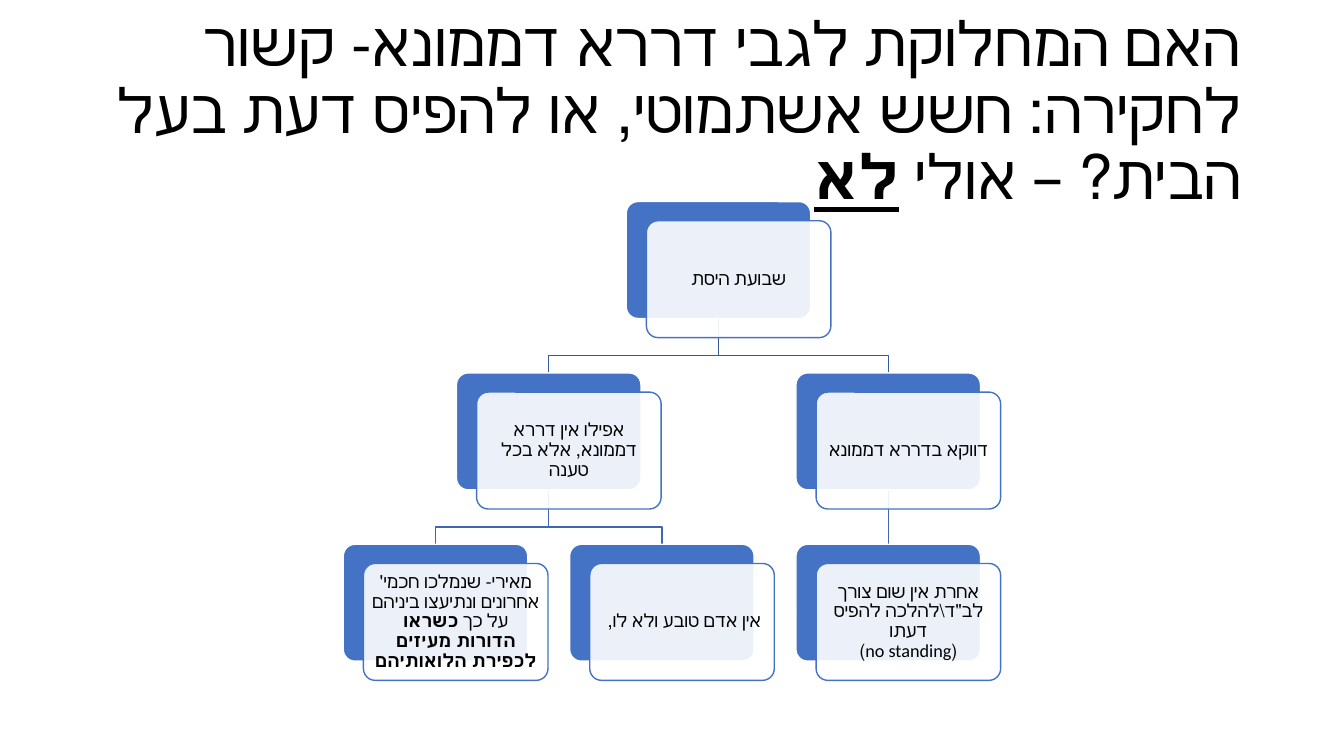
from dataclasses import dataclass

from lxml import etree
from pptx import Presentation
from pptx.dml.color import RGBColor
from pptx.enum import shapes, text
from pptx.oxml import ns
from pptx.util import Inches, Pt


@dataclass(frozen=True)
class Theme:
    font: str = "Calibri"
    title_size: int = 44
    card_size: int = 13
    ink: str = "000000"
    white: str = "FFFFFF"
    accent: str = "4472C4"
    upper_link: str = "365B9D"
    lower_link: str = "3E67B2"


THEME = Theme()

# Tree geometry in inches
FIRST_CENTER, LAST_CENTER, TREE_TOP = 4.32, 8.81, 2.0
COLUMN_STEP, ROW_STEP = (LAST_CENTER - FIRST_CENTER) / 2, 1.7
CARD_WIDTH, CARD_HEIGHT = 1.83, 1.16
FRONT_SHIFT_X, FRONT_SHIFT_Y = 0.2, 0.19
BEND_ABOVE_CHILD = 0.17
STRAIGHT_LINK_MARGIN = 0.05

# Each card: column, row, text runs as (text, bold)
CARDS = {
    "oath": (1.25, 0, [("שבועת היסת", False)]),
    "only": (2, 1, [("דווקא בדררא דממונא", False)]),
    "standing": (2, 2, [("אחרת אין שום צורך לב\"ד\\להלכה להפיס דעתו", False),
                        ("\n", False), ("(no standing)", False)]),
    "any claim": (0.5, 1, [("אפילו אין דררא דממונא, אלא בכל טענה", False)]),
    "claimant": (1, 2, [("אין אדם טובע ולא לו, ", False)]),
    "meiri": (0, 2, [("מאירי- שנמלכו חכמי' אחרונים ונתיעצו ביניהם על כך ", False),
                     ("כשראו הדורות מעיזים לכפירת הלואותיהם", True)]),
}
LINKS = [("any claim", "meiri"), ("any claim", "claimant"), ("oath", "any claim"),
         ("only", "standing"), ("oath", "only")]


def color(value):
    return RGBColor.from_string(value)


def card_top_center(name):
    column, row, _ = CARDS[name]
    return FIRST_CENTER + column * COLUMN_STEP, TREE_TOP + row * ROW_STEP


def write_hebrew(paragraph, runs, size, alignment):
    """Fill a right-to-left paragraph with (text, bold) runs."""
    for words, bold in runs:
        if words == "\n":
            paragraph.add_line_break()
            continue
        run = paragraph.add_run()
        run.text = words
        if bold:
            run.font.bold = True
    paragraph.alignment = alignment
    paragraph.line_spacing = 0.9
    paragraph._p.get_or_add_pPr().set("rtl", "1")
    font = paragraph.font
    font.name, font.size = THEME.font, Pt(size)
    font.color.rgb = color(THEME.ink)


def add_title(slide):
    title = slide.shapes.title
    title.left, title.top = Inches(0.92), Inches(0.4)
    title.width, title.height = Inches(11.5), Inches(1.45)
    frame = title.text_frame
    frame.word_wrap = True
    frame.auto_size = text.MSO_AUTO_SIZE.NONE
    frame.vertical_anchor = text.MSO_ANCHOR.MIDDLE
    paragraph = frame.paragraphs[0]
    write_hebrew(paragraph, [
        ("האם המחלוקת לגבי דררא דממונא- קשור לחקירה: חשש אשתמוטי, "
         "או להפיס דעת בעל הבית? – אולי ", False),
        ("לא", True),
        (" ", False),
    ], THEME.title_size, text.PP_ALIGN.RIGHT)
    paragraph.runs[1].font.underline = True


def add_link(slide, parent, child):
    start_x, parent_top = card_top_center(parent)
    end_x, end_y = card_top_center(child)
    start_y, bend_y = parent_top + CARD_HEIGHT, end_y - BEND_ABOVE_CHILD
    if start_x == end_x:
        # Moves to either side give the straight link a box with some width
        builder = slide.shapes.build_freeform(
            Inches(start_x - STRAIGHT_LINK_MARGIN), Inches(start_y))
        builder.move_to(Inches(start_x + STRAIGHT_LINK_MARGIN), Inches(start_y))
        builder.move_to(Inches(start_x), Inches(start_y))
        points = [(end_x, end_y)]
    else:
        builder = slide.shapes.build_freeform(Inches(start_x), Inches(start_y))
        points = [(start_x, bend_y), (end_x, bend_y), (end_x, end_y)]
    builder.add_line_segments([(Inches(x), Inches(y)) for x, y in points], close=False)
    link = builder.convert_to_shape()
    link.fill.background()
    link.shadow.inherit = False
    is_upper = CARDS[parent][1] == 0
    link.line.color.rgb = color(THEME.upper_link if is_upper else THEME.lower_link)
    link.line.width = Pt(1)


def add_panel(slide, left, top, fill, line):
    panel = slide.shapes.add_shape(
        shapes.MSO_SHAPE.ROUNDED_RECTANGLE,
        Inches(left), Inches(top), Inches(CARD_WIDTH), Inches(CARD_HEIGHT))
    panel.adjustments[0] = 0.1
    panel.shadow.inherit = False
    panel.fill.solid()
    panel.fill.fore_color.rgb = color(fill)
    panel.line.color.rgb = color(line)
    panel.line.width = Pt(1)
    return panel


def add_card(slide, name):
    center, top = card_top_center(name)
    left = center - CARD_WIDTH / 2
    add_panel(slide, left, top, THEME.accent, THEME.white)
    front = add_panel(slide, left + FRONT_SHIFT_X, top + FRONT_SHIFT_Y,
                      THEME.white, THEME.accent)
    # Let the back panel show through the front one
    fill_color = front._element.spPr.find(ns.qn("a:solidFill"))[0]
    etree.SubElement(fill_color, ns.qn("a:alpha"), val="90000")

    frame = front.text_frame
    frame.word_wrap = True
    frame.vertical_anchor = text.MSO_ANCHOR.MIDDLE
    frame.margin_left = frame.margin_right = Inches(0.05)
    frame.margin_top = frame.margin_bottom = Inches(0.05)
    write_hebrew(frame.paragraphs[0], CARDS[name][2], THEME.card_size,
                 text.PP_ALIGN.CENTER)


def main():
    presentation = Presentation()
    presentation.slide_width, presentation.slide_height = Inches(13.33), Inches(7.5)
    slide = presentation.slides.add_slide(presentation.slide_layouts[5])
    add_title(slide)
    # Links lie behind the cards
    for parent, child in LINKS:
        add_link(slide, parent, child)
    for name in CARDS:
        add_card(slide, name)
    presentation.save("out.pptx")


if __name__ == "__main__":
    main()
